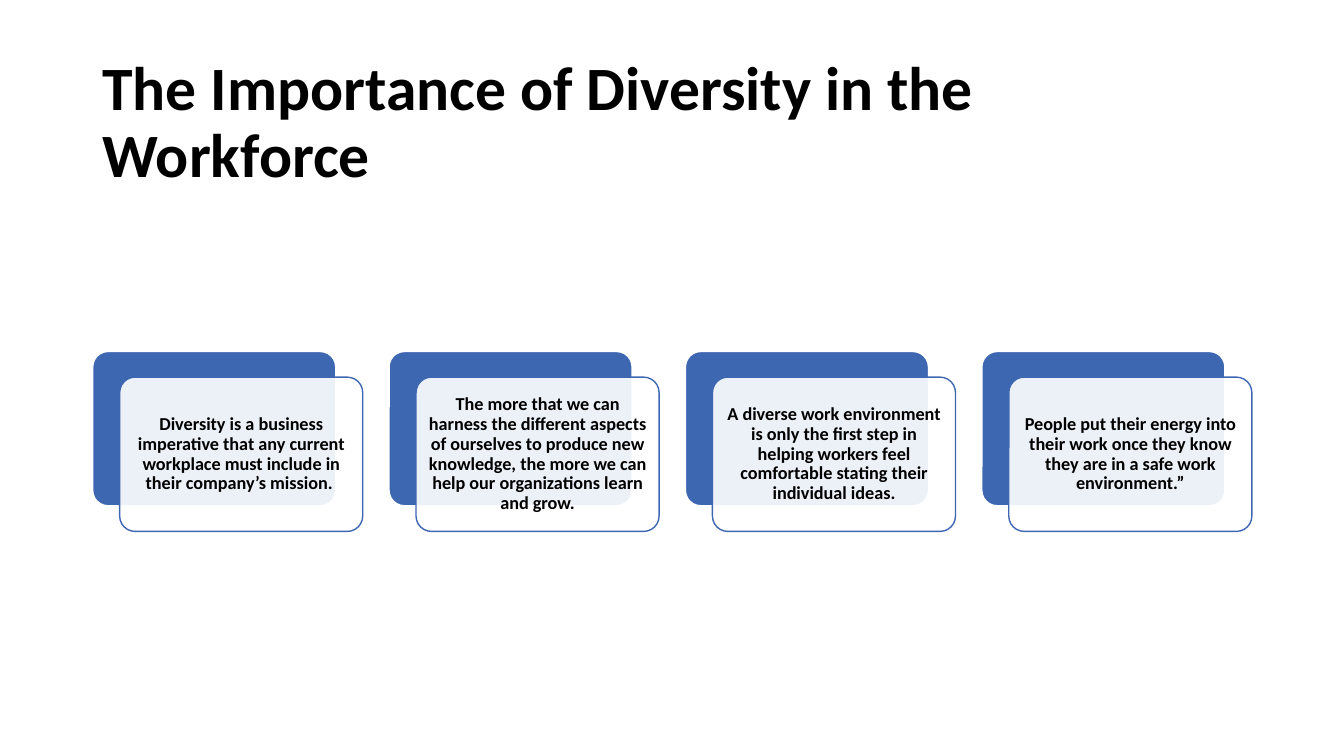
from dataclasses import dataclass

from lxml.etree import SubElement
from pptx import Presentation
from pptx.dml.color import RGBColor
from pptx.enum.shapes import MSO_SHAPE as Preset
from pptx.enum.text import MSO_ANCHOR as Anchor, MSO_AUTO_SIZE as AutoSize, PP_ALIGN as Align
from pptx.oxml.ns import qn
from pptx.shapes.autoshape import Shape
from pptx.slide import Slide
from pptx.text.text import TextFrame
from pptx.util import Pt


@dataclass(frozen=True)
class Theme:
    font: str = "Calibri"
    title_size: float = 44
    card_size: float = 13
    line_width: float = 1
    line_spacing: float = 0.9
    text: RGBColor = RGBColor(0x00, 0x00, 0x00)
    accent: RGBColor = RGBColor(0x3E, 0x67, 0xB2)
    paper: RGBColor = RGBColor(0xFF, 0xFF, 0xFF)


@dataclass(frozen=True)
class Box:
    left: float
    top: float
    width: float
    height: float

    def moved(self, right: float, down: float = 0) -> "Box":
        return Box(self.left + right, self.top + down, self.width, self.height)


@dataclass(frozen=True)
class Card:
    box: Box
    message: str


THEME = Theme()
TITLE = "The Importance of Diversity in the Workforce"
TITLE_BOX = Box(66, 43.9, 828, 89.3)
FIRST_CARD_BOX = Box(66.24, 251.1, 173.6, 110.2)
CARD_PITCH = 211.7
FRONT_SHIFT = (19.28, 18.3)
CARD_INSET = 3.6
MESSAGES = (
    "Diversity is a business imperative that any current workplace must include "
    "in their company’s mission. ",
    "The more that we can harness the different aspects of ourselves to produce new "
    "knowledge, the more we can help our organizations learn and grow.",
    "A diverse work environment is only the first step in helping workers feel "
    "comfortable stating their individual ideas.",
    "People put their energy into their work once they know they are in a safe "
    "work environment.”",
)
CARDS = [Card(FIRST_CARD_BOX.moved(CARD_PITCH * index), message)
         for index, message in enumerate(MESSAGES)]


def write_text(frame: TextFrame, text: str, size: float, align: Align) -> None:
    frame.word_wrap = True
    frame.auto_size = AutoSize.NONE
    frame.vertical_anchor = Anchor.MIDDLE
    paragraph = frame.paragraphs[0]
    paragraph.alignment = align
    paragraph.line_spacing = THEME.line_spacing
    run = paragraph.add_run()
    run.text = text
    run.font.name = THEME.font
    run.font.size = Pt(size)
    run.font.bold = True
    run.font.color.rgb = THEME.text


def add_panel(slide: Slide, box: Box, fill: RGBColor, line: RGBColor) -> Shape:
    shape = slide.shapes.add_shape(Preset.ROUNDED_RECTANGLE, Pt(box.left), Pt(box.top),
                                   Pt(box.width), Pt(box.height))
    shape.adjustments[0] = 0.1
    shape.shadow.inherit = False
    shape.fill.solid()
    shape.fill.fore_color.rgb = fill
    shape.line.color.rgb = line
    shape.line.width = Pt(THEME.line_width)
    return shape


def set_fill_opacity(shape: Shape, percent: int) -> None:
    color = shape.fill._xPr.find(qn("a:solidFill")).find(qn("a:srgbClr"))
    SubElement(color, qn("a:alpha")).set("val", str(percent * 1000))


def add_card(slide: Slide, card: Card) -> None:
    """Draw a solid back panel with a translucent text panel shifted over it."""
    add_panel(slide, card.box, THEME.accent, THEME.paper)
    front = add_panel(slide, card.box.moved(*FRONT_SHIFT), THEME.paper, THEME.accent)
    set_fill_opacity(front, 90)
    frame = front.text_frame
    frame.margin_left = frame.margin_right = Pt(CARD_INSET)
    frame.margin_top = frame.margin_bottom = Pt(CARD_INSET)
    write_text(frame, card.message, THEME.card_size, Align.CENTER)


def add_title(slide: Slide) -> None:
    title = slide.shapes.title
    title.left, title.top = Pt(TITLE_BOX.left), Pt(TITLE_BOX.top)
    title.width, title.height = Pt(TITLE_BOX.width), Pt(TITLE_BOX.height)
    write_text(title.text_frame, TITLE, THEME.title_size, Align.LEFT)


def main() -> None:
    presentation = Presentation()
    presentation.slide_width, presentation.slide_height = Pt(960), Pt(540)
    title_only = presentation.slide_layouts.get_by_name("Title Only")
    slide = presentation.slides.add_slide(title_only)
    add_title(slide)
    for card in CARDS:
        add_card(slide, card)
    presentation.save("out.pptx")


if __name__ == "__main__":
    main()
